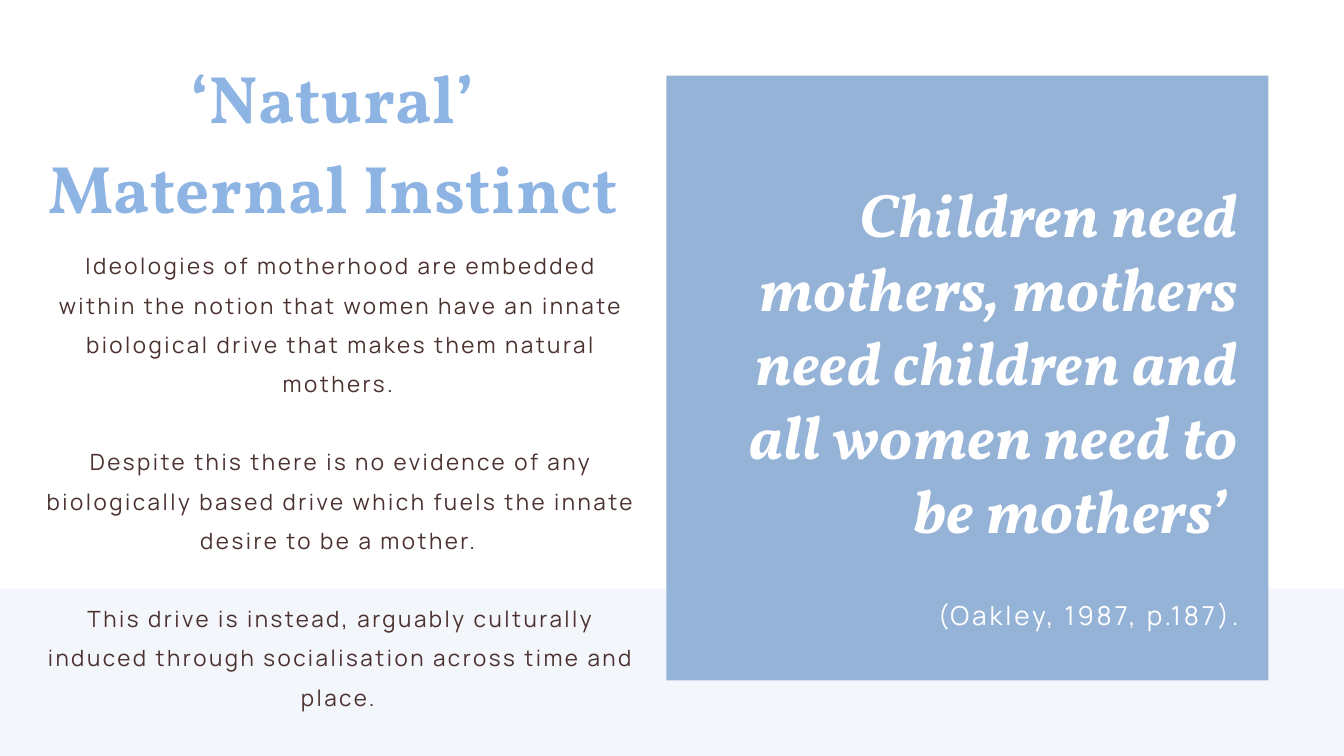
import pptx
import pptx.util
import pptx.dml.color
import pptx.enum.shapes
import pptx.enum.text
import pptx.oxml
import pptx.oxml.ns

ALIGN = pptx.enum.text.PP_ALIGN
PX = 9525  # EMU per px, 1920 x 1080 px slide

# Theme: colours and type styles (sizes, leading, gap and tracking in points)
THEME = {
    "band": "C6D9F1",
    "panel": "95B3D7",
    "title": dict(size=72, name="Vollkorn", color="8EB4E3", bold=True, italic=False,
                  track=0.8, leading=96, gap=0, align=ALIGN.CENTER),
    "body": dict(size=24, name="Manrope", color="4B3230", bold=False, italic=False,
                 track=2.7, leading=42, gap=42, align=ALIGN.CENTER),
    "quote": dict(size=66, name="Vollkorn", color="FFFFFF", bold=True, italic=True,
                  track=0.3, leading=None, gap=0, align=ALIGN.RIGHT),
    "citation": dict(size=28, name="Manrope", color="FFFFFF", bold=False, italic=False,
                     track=3.1, leading=49, gap=0, align=ALIGN.RIGHT),
}

# Content
TITLE = ["‘Natural’ Maternal Instinct"]
BODY = [
    "Ideologies of motherhood are embedded within the notion that women have an innate "
    "biological drive that makes them natural mothers. ",
    "Despite this there is no evidence of any biologically based drive which fuels the "
    "innate desire to be a mother. ",
    "This drive is instead, arguably culturally induced through socialisation across "
    "time and place. ",
]
QUOTE = ["Children need mothers, mothers need children and all women need to be mothers’ "]
CITATION = ["(Oakley, 1987, p.187)."]

# Boxes: left, top, width, height in px
BAND_BOX = (0, 841, 1920, 239)
PANEL_BOX = (952, 108, 860, 864)
TITLE_BOX = (63, 68, 826, 248)
BODY_BOX = (63, 343, 849, 674)
QUOTE_BOX = (995, 252, 775, 533)
CITATION_BOX = (995, 836, 775, 60)


def emu(box):
    return [v * PX for v in box]


def rgb(color):
    return pptx.dml.color.RGBColor.from_string(color)


def set_all(target, values):
    for key, value in values.items():
        setattr(target, key, value)


def add_block(slide, box, color, alpha=None):
    sp = slide.shapes.add_shape(pptx.enum.shapes.MSO_SHAPE.RECTANGLE, *emu(box))
    sp.shadow.inherit = False
    sp.fill.solid()
    sp.fill.fore_color.rgb = rgb(color)
    sp.line.fill.background()
    if alpha is not None:
        clr = sp.element.spPr.find(".//" + pptx.oxml.ns.qn("a:srgbClr"))
        clr.append(pptx.oxml.parse_xml(
            f'<a:alpha {pptx.oxml.ns.nsdecls("a")} val="{alpha * 1000}"/>'))
    return sp


def write(sp, box, paragraphs, style):
    set_all(sp, dict(zip(("left", "top", "width", "height"), emu(box))))
    tf = sp.text_frame
    set_all(tf, dict(margin_left=0, margin_top=0, margin_right=0, margin_bottom=0,
                     word_wrap=True, auto_size=pptx.enum.text.MSO_AUTO_SIZE.NONE,
                     vertical_anchor=pptx.enum.text.MSO_ANCHOR.TOP))
    for i, text in enumerate(paragraphs):
        p = tf.add_paragraph() if i else tf.paragraphs[0]
        leading = style["leading"]
        set_all(p, dict(alignment=style["align"],
                        line_spacing=pptx.util.Pt(leading) if leading else 1.0,
                        space_before=pptx.util.Pt(style["gap"] if i else 0),
                        space_after=pptx.util.Pt(0)))
        # No bullet and no hanging indent
        pPr = p._p.get_or_add_pPr()
        pPr.set("marL", "0")
        pPr.set("indent", "0")
        pPr.append(pptx.oxml.parse_xml(f'<a:buNone {pptx.oxml.ns.nsdecls("a")}/>'))
        r = p.add_run()
        r.text = text
        set_all(r.font, {k: style[k] for k in ("name", "bold", "italic")})
        r.font.size = pptx.util.Pt(style["size"])
        r.font.color.rgb = rgb(style["color"])
        r.font._element.set("spc", str(round(style["track"] * 100)))


def main():
    prs = pptx.Presentation()
    prs.slide_width, prs.slide_height = 1920 * PX, 1080 * PX
    slide = prs.slides.add_slide(prs.slide_layouts[1])
    title, body = slide.shapes.title, slide.placeholders[1]

    # Background band and quote panel, with the placeholders brought in front
    add_block(slide, BAND_BOX, THEME["band"], alpha=20)
    add_block(slide, PANEL_BOX, THEME["panel"])
    for sp in (title, body):
        sp.element.getparent().append(sp.element)

    # Title and body text
    write(title, TITLE_BOX, TITLE, THEME["title"])
    write(body, BODY_BOX, BODY, THEME["body"])

    # Quote and its citation
    for box, text, name in ((QUOTE_BOX, QUOTE, "quote"),
                            (CITATION_BOX, CITATION, "citation")):
        write(slide.shapes.add_textbox(*emu(box)), box, text, THEME[name])

    prs.save("out.pptx")


if __name__ == "__main__":
    main()
